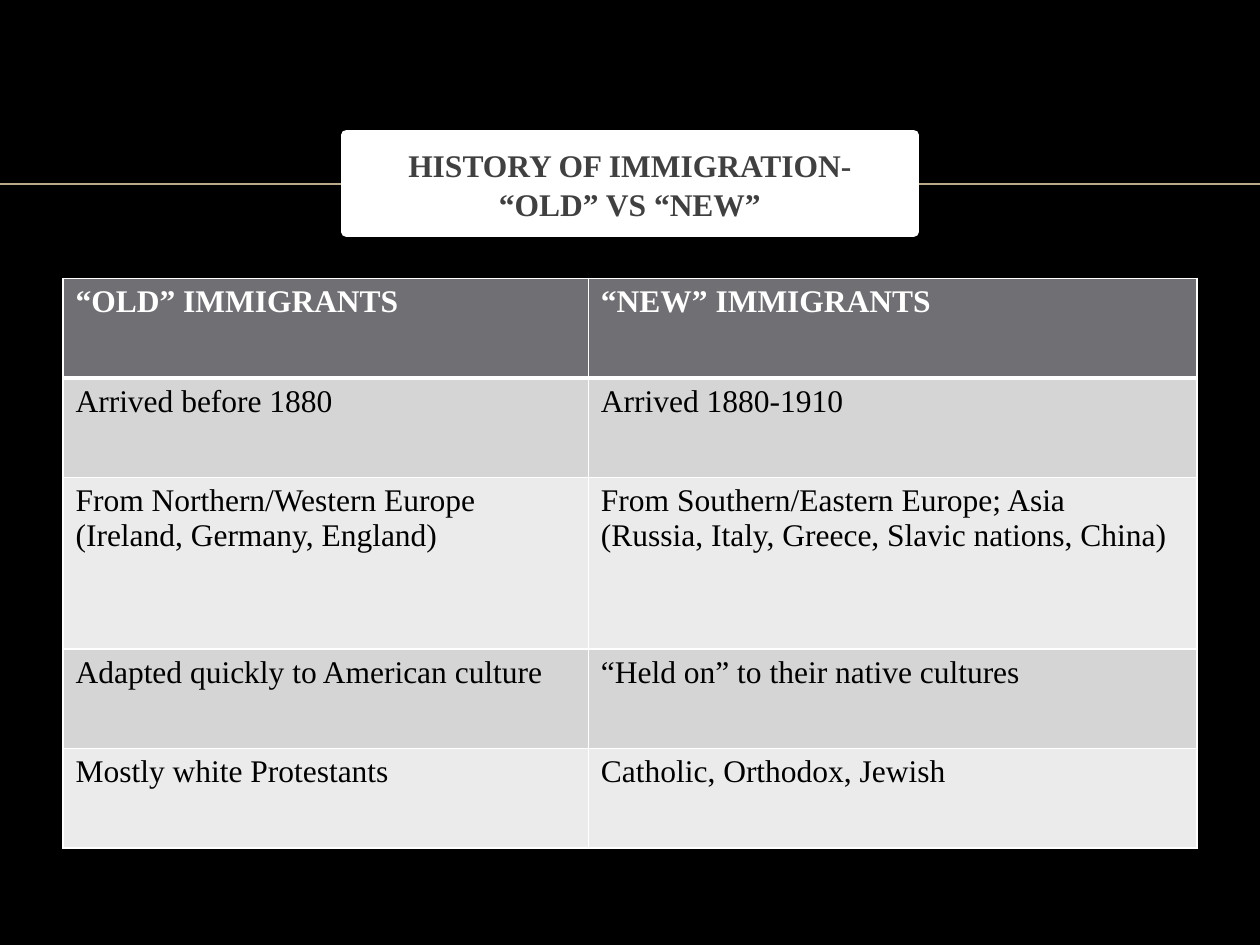
from copy import deepcopy

from lxml import etree
from pptx import Presentation
from pptx.dml.color import RGBColor
from pptx.enum.shapes import MSO_CONNECTOR
from pptx.enum.text import MSO_ANCHOR, MSO_AUTO_SIZE, PP_ALIGN
from pptx.oxml import parse_xml
from pptx.oxml.ns import nsdecls, qn
from pptx.util import Inches, Pt

STRAIGHT = MSO_CONNECTOR.STRAIGHT
MIDDLE = MSO_ANCHOR.MIDDLE
NO_FIT = MSO_AUTO_SIZE.NONE
CENTER = PP_ALIGN.CENTER

COLORS = {
    "background": "000000",
    "rule": "BBAA8A",
    "white": "FFFFFF",
    "title": "404040",
    "body": "000000",
    "header": "6F6F74",
    "band_dark": "D5D5D6",
    "band_light": "EBEBEB",
}
TEXT = {"name": "Times New Roman", "size": Pt(18)}
COLUMN_WIDTHS = [4.17, 4.83]
ROW_HEIGHTS = [0.79, 0.79, 1.36, 0.79, 0.79]
ROWS = [
    ("“OLD” IMMIGRANTS", "“NEW” IMMIGRANTS"),
    ("Arrived before 1880", "Arrived 1880-1910"),
    ("From Northern/Western Europe\n(Ireland, Germany, England)",
     "From Southern/Eastern Europe; Asia\n(Russia, Italy, Greece, Slavic nations, China)"),
    ("Adapted quickly to American culture", "“Held on” to their native cultures"),
    ("Mostly white Protestants", "Catholic, Orthodox, Jewish"),
]


def rgb(name):
    return RGBColor.from_string(COLORS[name])


class SlideBuilder:
    """Holds the text style and the current slide, and adds its elements."""

    def __init__(self, s, text):
        self.s = s
        self.text = text

    def background(self, color):
        fill = self.s.background.fill
        fill.solid()
        fill.fore_color.rgb = rgb(color)

    def style(self, tf, color, bold):
        for p in tf.paragraphs:
            for r in p.runs:
                for key, value in {**self.text, "bold": bold}.items():
                    setattr(r.font, key, value)
                r.font.color.rgb = rgb(color)

    def rule(self, y, width, color):
        line = self.s.shapes.add_connector(STRAIGHT, 0, Inches(y), Inches(width), Inches(y))
        line.line.color.rgb = rgb(color)
        line.line.width = Pt(1)
        etree.SubElement(line.element.spPr, qn("a:effectLst"))

    def borders(self, cell, widths):
        tcPr = cell._tc.get_or_add_tcPr()
        for side, width in widths.items():
            tcPr.append(parse_xml(
                f'<a:ln{side} {nsdecls("a")} w="{Pt(width)}"><a:solidFill>'
                f'<a:srgbClr val="{COLORS["white"]}"/></a:solidFill></a:ln{side}>'))

    def table(self, left, top, rows, widths, heights):
        frame = self.s.shapes.add_table(len(rows), len(widths), Inches(left), Inches(top),
                                        Inches(sum(widths)), Inches(sum(heights)))
        table = frame.table
        for column, width in zip(table.columns, widths):
            column.width = Inches(width)
        for i, (row, height) in enumerate(zip(rows, heights)):
            table.rows[i].height = Inches(height)
            header = i == 0
            fill = "header" if header else ("band_light", "band_dark")[i % 2]
            for j, text in enumerate(row):
                cell = table.cell(i, j)
                cell.text = text
                self.style(cell.text_frame, "white" if header else "body", header)
                self.borders(cell, {"L": 1, "R": 1, "T": 3 if i == 1 else 1, "B": 3 if header else 1})
                cell.fill.solid()
                cell.fill.fore_color.rgb = rgb(fill)

    def title(self, text, left, top, width, height):
        sp = self.s.shapes.title
        box = {"left": left, "top": top, "width": width, "height": height}
        for key, value in box.items():
            setattr(sp, key, Inches(value))
        sp.fill.solid()
        sp.fill.fore_color.rgb = rgb("white")
        sp.line.color.rgb = rgb("white")
        sp.line.width = Pt(6)
        tf = sp.text_frame
        tf.text = text
        for key, value in {"word_wrap": True, "auto_size": NO_FIT, "vertical_anchor": MIDDLE}.items():
            setattr(tf, key, value)
        p = tf.paragraphs[0]
        for key, value in {"alignment": CENTER, "space_before": Pt(4), "line_spacing": 1.05}.items():
            setattr(p, key, value)
        self.style(tf, "title", True)
        for br in p._p.findall(qn("a:br")):
            br.append(deepcopy(p.runs[0].font._element))
        sp.element.getparent().append(sp.element)


def main():
    prs = Presentation()
    prs.slide_width, prs.slide_height = Inches(10), Inches(7.5)
    slide = SlideBuilder(prs.slides.add_slide(prs.slide_layouts[5]), TEXT)
    slide.background("background")
    slide.rule(1.46, 10, "rule")
    slide.table(0.5, 2.21, ROWS, COLUMN_WIDTHS, ROW_HEIGHTS)
    slide.title("HISTORY OF IMMIGRATION-\v“OLD” VS “NEW”", 2.75, 1.07, 4.5, 0.77)
    prs.save("out.pptx")


if __name__ == "__main__":
    main()
